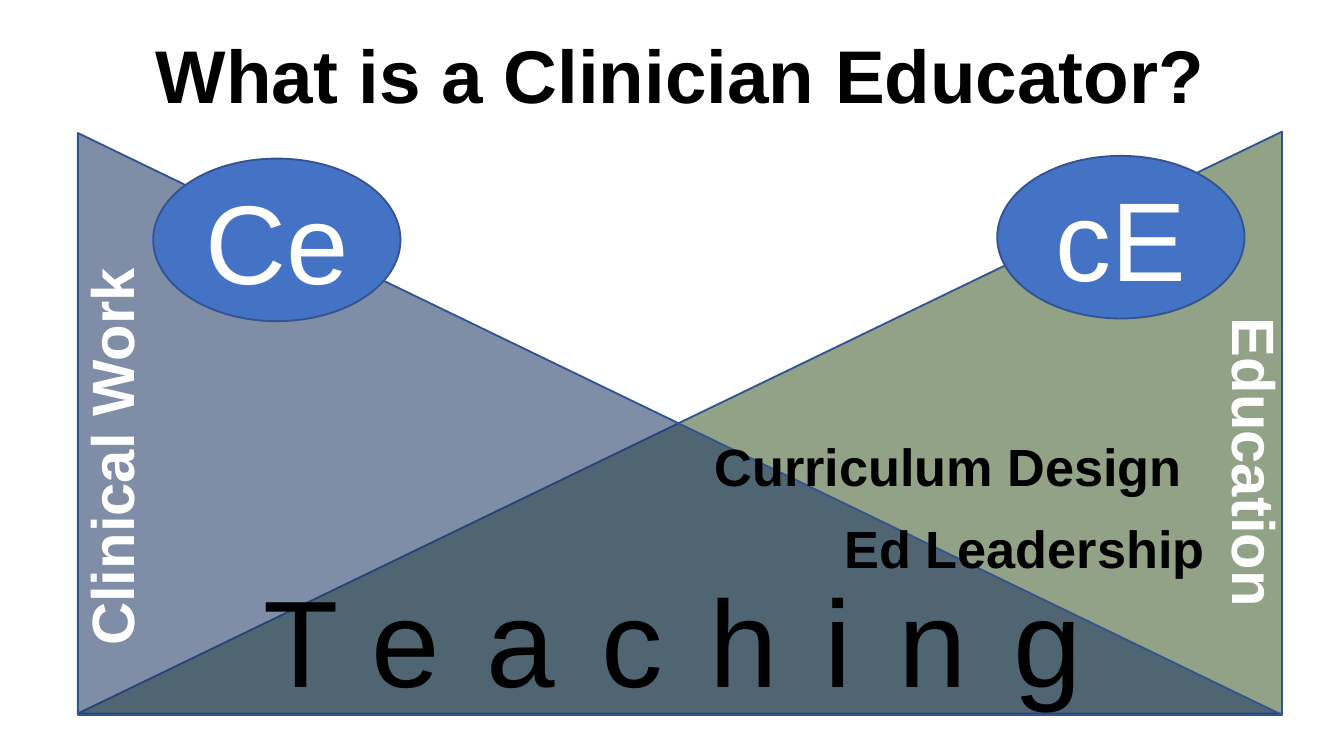
from lxml import etree
from pptx import Presentation
from pptx.dml.color import RGBColor
from pptx.enum.shapes import MSO_SHAPE
from pptx.enum.text import MSO_ANCHOR, PP_ALIGN
from pptx.oxml.ns import qn
from pptx.util import Inches, Pt

WEDGE, OVAL = MSO_SHAPE.RIGHT_TRIANGLE, MSO_SHAPE.OVAL
TOP, MID = MSO_ANCHOR.TOP, MSO_ANCHOR.MIDDLE
LEFT, MIDDLE, RIGHT = PP_ALIGN.LEFT, PP_ALIGN.CENTER, PP_ALIGN.RIGHT
UNIT = Inches(0.1)
COLS, ROWS = 100, 56.25
BLACK, WHITE, BLUE, EDGE = "000000", "FFFFFF", "4472C4", "325491"
HEAD = {"size": Pt(40), "bold": True}
SIDE = {"size": Pt(32), "bold": True}
TASK = {"size": Pt(28), "bold": True}
BASE = {"size": Pt(66), "bold": False}
ROLE = {"size": Pt(60), "bold": False}


def color(text):
    return RGBColor.from_string(text)


def place(box, part):
    x, y, w, h = part
    return [round(n * UNIT) for n in (box[0] + x, box[1] + y, w, h)]


def write(shape, text, style, ink, align, anchor=TOP):
    frame = shape.text_frame
    frame.word_wrap = True
    frame.vertical_anchor = anchor
    para = frame.paragraphs[0]
    para.alignment = align
    run = para.add_run()
    run.text = text
    for name, value in {"name": "Arial", **style}.items():
        setattr(run.font, name, value)
    run.font.color.rgb = color(ink)
    return run


def label(slide, box, part, text, style, ink, align, turn=0, anchor=TOP):
    shape = slide.shapes.add_textbox(*place(box, part))
    shape.rotation = turn
    return write(shape, text, style, ink, align, anchor)


def solid(slide, kind, box, part, fill):
    shape = slide.shapes.add_shape(kind, *place(box, part))
    shape.shadow.inherit = False
    shape.fill.solid()
    shape.fill.fore_color.rgb = color(fill)
    shape.line.color.rgb = color(EDGE)
    shape.line.width = Pt(1)
    return shape


def wedge(slide, box, part, fill, share, flip=False):
    shape = solid(slide, WEDGE, box, part, fill)
    tone = shape.fill._xPr.find(qn("a:solidFill"))[0]
    etree.SubElement(tone, qn("a:alpha"), val=str(share * 1000))
    if flip:
        shape._element.spPr.find(qn("a:xfrm")).set("flipH", "1")


def title(slide, box):
    label(slide, box, (0, 0, *box[2:]), "What is a Clinician Educator?",
          HEAD, BLACK, MIDDLE, anchor=MID)


def chart(slide, box):
    w, h = box[2:]
    wedge(slide, box, (0, 0, w, h), "385723", 55, flip=True)
    wedge(slide, box, (0, 0.1, w, h), "203864", 57)
    sides = [("Clinical Work", (-13.2, 21, 31.3, 6.4), 270),
             ("Education", (73, 21.4, 29.3, 6.4), 90)]
    for text, part, turn in sides:
        label(slide, box, part, text, SIDE, WHITE, MIDDLE, turn)
    run = label(slide, box, (12.8, 31.7, 73.6, 12.1), "Teaching", BASE, BLACK, LEFT)
    run.font._element.set("spc", "2500")
    tasks = [("Curriculum Design", (44.1, 22, 39, 5.7)),
             ("Ed Leadership", (55.5, 28.1, 29.3, 5.7))]
    for text, part in tasks:
        label(slide, box, part, text, TASK, BLACK, RIGHT)
    for text, x, y in [("Ce", 5.6, 2), ("cE", 68.4, 1.8)]:
        shape = solid(slide, OVAL, box, (x, y, 18.4, 12.1), BLUE)
        write(shape, text, ROLE, WHITE, MIDDLE, MID)


def main():
    deck = Presentation()
    deck.slide_width = round(COLS * UNIT)
    deck.slide_height = round(ROWS * UNIT)
    slide = deck.slides.add_slide(deck.slide_layouts[6])
    title(slide, (5.8, 2.1, 89.6, 6.8))
    chart(slide, (5.8, 9.8, 89.6, 43.3))
    deck.save("out.pptx")


if __name__ == "__main__":
    main()
